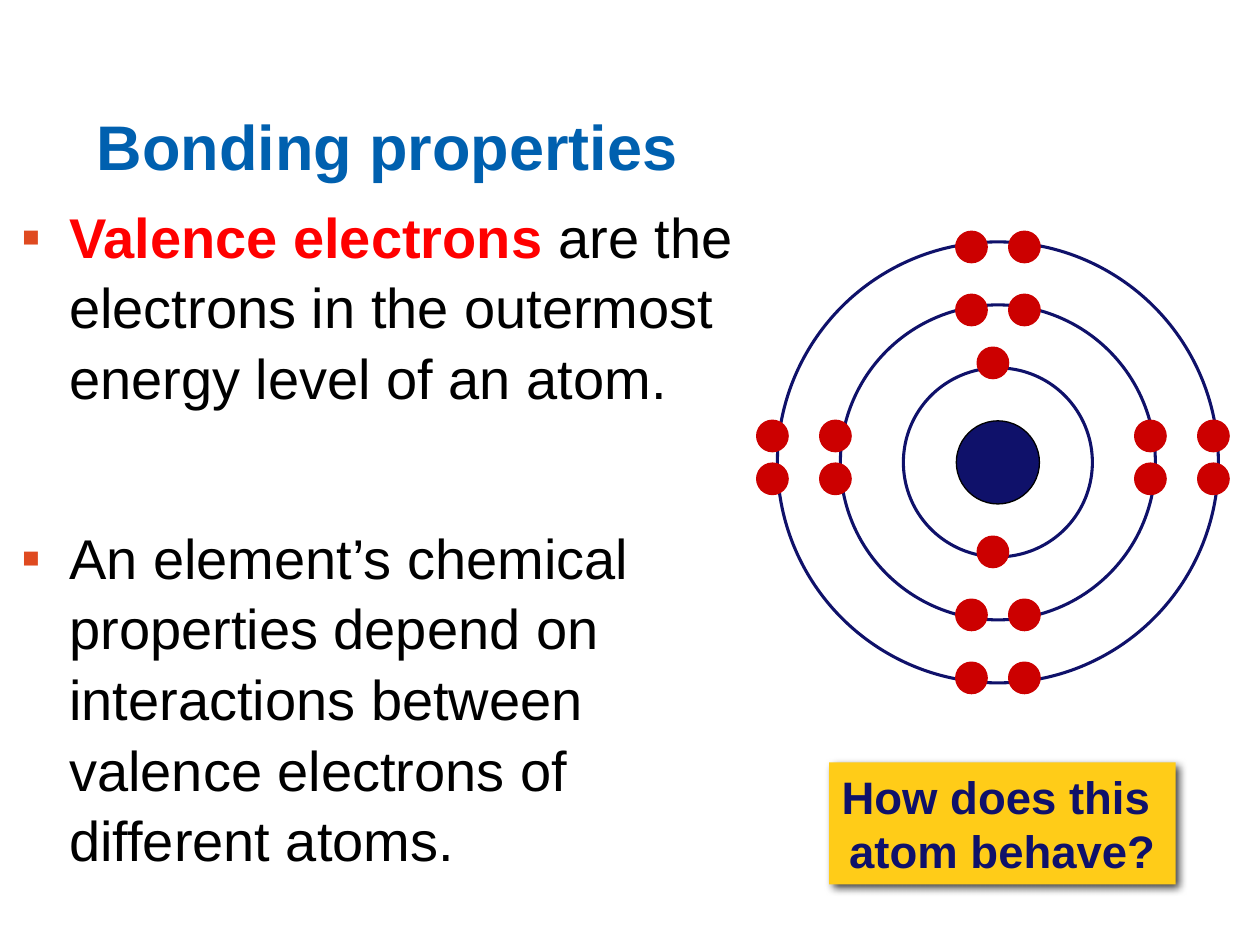
from lxml import etree
from pptx import Presentation
from pptx.dml.color import RGBColor
from pptx.enum import shapes, text
from pptx.oxml import ns
from pptx.util import Inches, Pt

NAVY = RGBColor(0x0F, 0x11, 0x6A)
RED = RGBColor(0xCC, 0x00, 0x00)
BRIGHT = RGBColor(0xFF, 0x00, 0x00)
BLUE = RGBColor(0x00, 0x60, 0xAF)
GOLD = RGBColor(0xFF, 0xCC, 0x18)
BLACK = RGBColor(0, 0, 0)
RUST = "DF4A20"
FONT = "Arial"

TITLE = "Bonding properties"
# Each bullet: space before in points, then runs of (words, colour, bold)
BULLETS = [
    (6, [("Valence electrons", BRIGHT, True),
         (" are the electrons in the outermost energy level of an atom.", BLACK, False)]),
    (56.5, [("An element’s chemical properties depend on interactions "
             "between valence electrons of different atoms.", BLACK, False)]),
]
QUESTION = "How does this \vatom behave?"

MID_X, MID_Y = 7.92, 3.67
CORE = 0.33
DOT = 0.125
RINGS = [0.75, 1.25, 1.75]
PAIR_X = (-0.21, 0.21)
PAIR_Y = (-0.21, 0.13)
SHIFT = 0.04


def style(run, size, color, bold):
    font = run.font
    font.name, font.size, font.bold = FONT, Pt(size), bold
    font.color.rgb = color


def node(parent, tag, **attrs):
    return etree.SubElement(parent, ns.qn(tag), attrs)


def add_box(slide, left, top, width, height):
    frame = slide.shapes.add_textbox(
        Inches(left), Inches(top), Inches(width), Inches(height)).text_frame
    frame.word_wrap = True
    return frame


def add_disc(group, dx, dy, radius, fill, line, weight):
    """Draw a circle centred at an offset from the nucleus."""
    disc = group.shapes.add_shape(
        shapes.MSO_SHAPE.OVAL,
        Inches(MID_X + dx - radius), Inches(MID_Y + dy - radius),
        Inches(2 * radius), Inches(2 * radius))
    disc.shadow.inherit = False
    if fill is None:
        disc.fill.background()
    else:
        disc.fill.solid()
        disc.fill.fore_color.rgb = fill
    disc.line.color.rgb = line
    disc.line.width = Pt(weight)


def shell_spots(radius):
    """Offsets of the electrons on one ring: two on the first, eight on others."""
    reach = radius - SHIFT
    if radius == RINGS[0]:
        return [(-SHIFT, -radius - SHIFT), (-SHIFT, reach)]
    ends = [(x, y) for y in (-reach, reach) for x in PAIR_X]
    sides = [(x, y) for x in (-radius - SHIFT, reach) for y in PAIR_Y]
    return ends + sides


def add_atom(slide):
    group = slide.shapes.add_group_shape()
    add_disc(group, 0, 0, CORE, NAVY, BLACK, 0.75)
    for radius in RINGS:
        add_disc(group, 0, 0, radius, None, NAVY, 1.75)
        for dx, dy in shell_spots(radius):
            add_disc(group, dx, dy, DOT, RED, RED, 0.75)


def add_title(slide):
    frame = add_box(slide, 0.67, 0.75, 8.5, 0.83)
    frame.margin_top = Inches(0.1)
    frame.text = TITLE
    style(frame.paragraphs[0].runs[0], 36, BLUE, True)


def add_bullets(slide):
    frame = add_box(slide, 0.17, 1.58, 6, 5.42)
    frame.margin_left = frame.margin_top = frame.margin_bottom = 0
    frame.margin_right = Inches(0.15)
    for i, (before, runs) in enumerate(BULLETS):
        para = frame.add_paragraph() if i else frame.paragraphs[0]
        para.space_before, para.space_after = Pt(before), Pt(6)
        para.line_spacing = 1.05
        for words, color, bold in runs:
            run = para.add_run()
            run.text = words
            style(run, 32, color, bold)
        props = para._p.get_or_add_pPr()
        props.set("marL", str(Inches(0.38)))
        props.set("indent", str(Inches(-0.38)))
        node(node(props, "a:buClr"), "a:srgbClr", val=RUST)
        node(props, "a:buFont", typeface=FONT)
        node(props, "a:buChar", char="▪")


def add_question(slide):
    card = slide.shapes.add_shape(
        shapes.MSO_SHAPE.RECTANGLE,
        Inches(6.58), Inches(6.05), Inches(2.75), Inches(0.97))
    card.fill.solid()
    card.fill.fore_color.rgb = GOLD
    card.line.fill.background()
    card.shadow.inherit = False
    effects = card._element.spPr.find(ns.qn("a:effectLst"))
    shade = node(effects, "a:outerShdw", blurRad=str(Pt(5)), dist=str(Pt(3)),
                 dir="2700000", algn="ctr", rotWithShape="0")
    node(node(shade, "a:srgbClr", val="000000"), "a:alpha", val="75000")
    frame = card.text_frame
    frame.word_wrap = False
    frame.vertical_anchor = text.MSO_ANCHOR.MIDDLE
    frame.text = QUESTION
    para = frame.paragraphs[0]
    para.alignment = text.PP_ALIGN.CENTER
    for run in para.runs:
        style(run, 26, NAVY, True)


def main():
    deck = Presentation()
    deck.slide_width, deck.slide_height = Inches(10), Inches(7.5)
    slide = deck.slides.add_slide(deck.slide_layouts[6])
    add_atom(slide)
    add_title(slide)
    add_bullets(slide)
    add_question(slide)
    deck.save("out.pptx")


if __name__ == "__main__":
    main()
